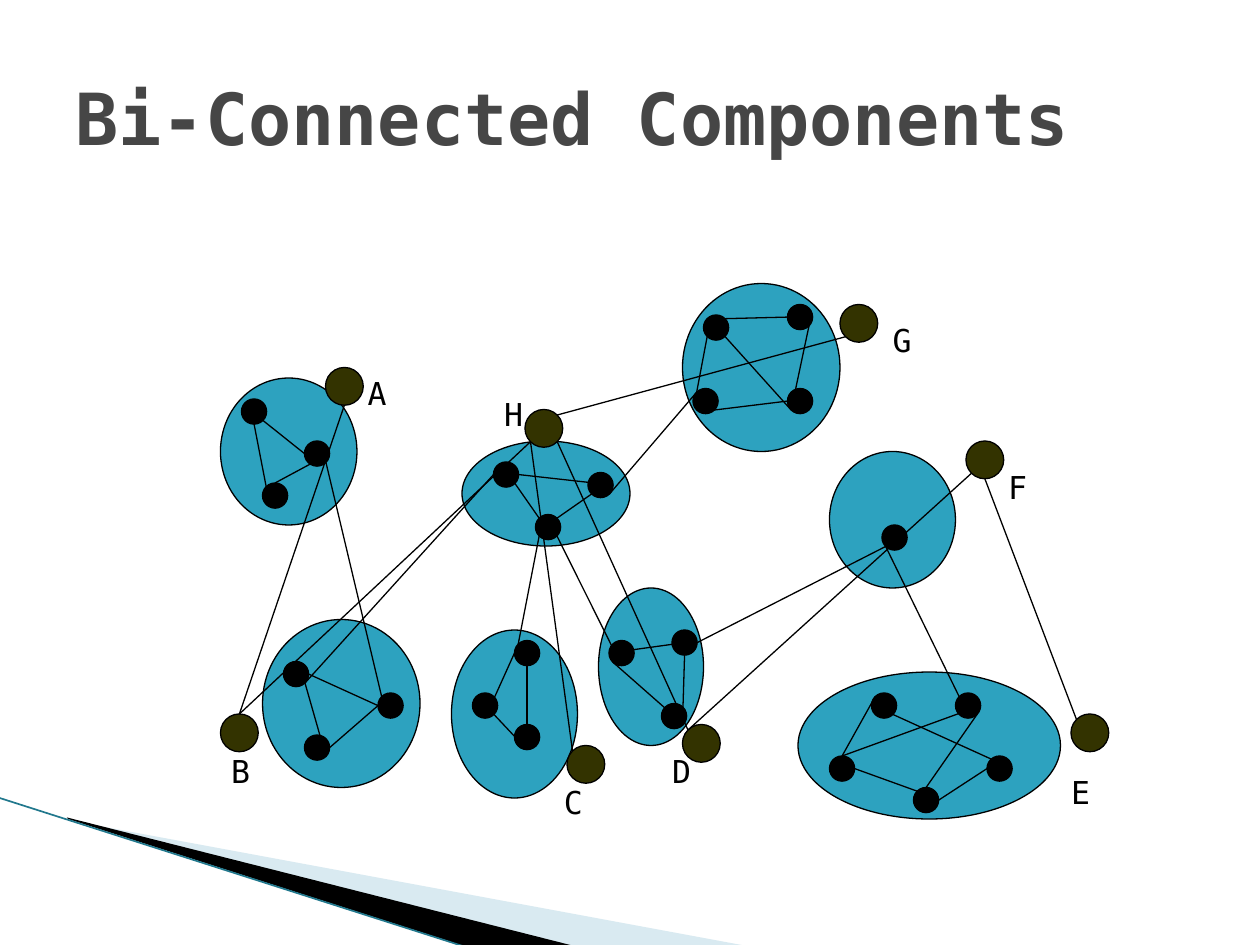
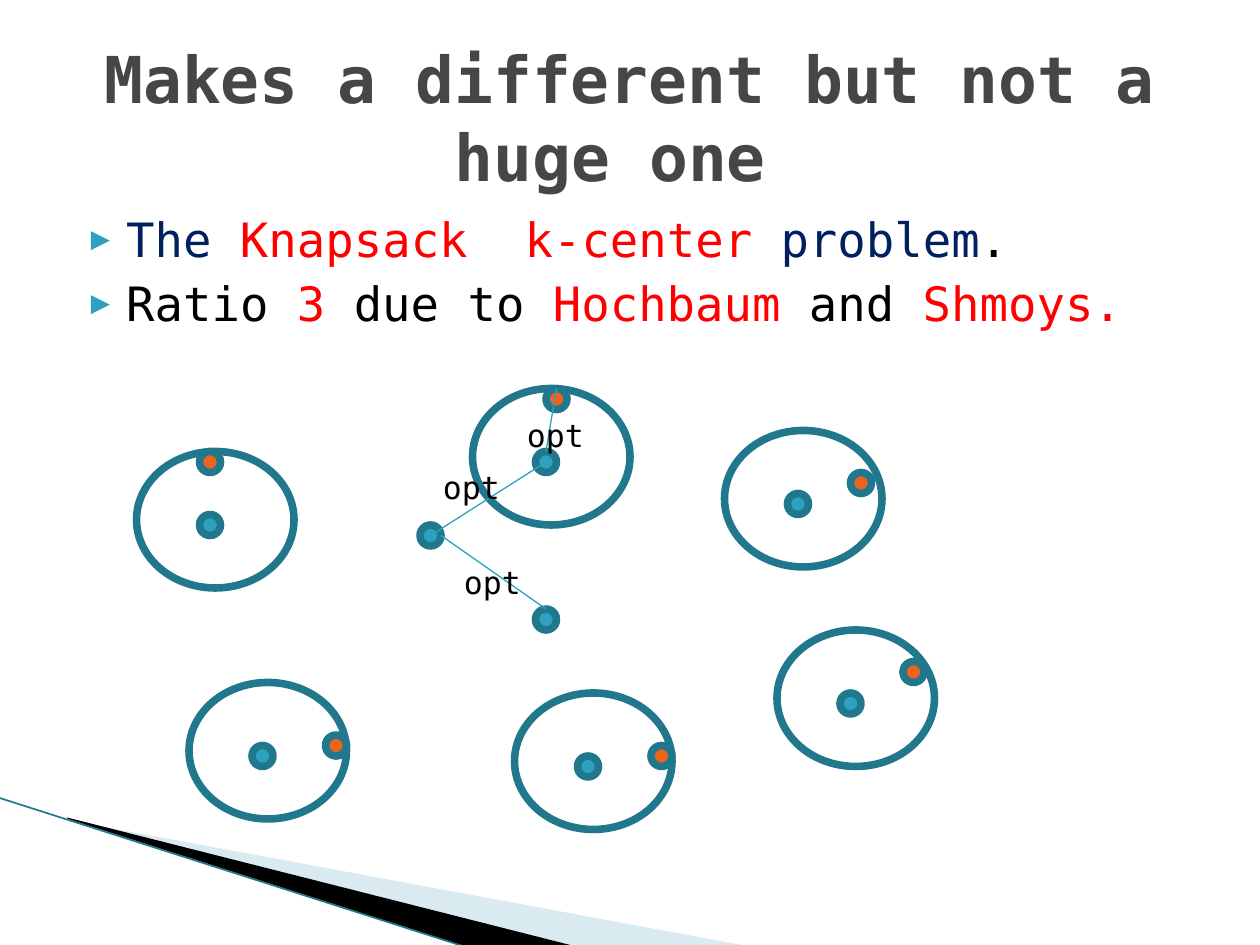
from lxml import etree
from pptx import Presentation
from pptx import util as u
from pptx.dml import color
from pptx.enum import shapes, text
from pptx.oxml import ns

FONT = "DejaVu Sans Mono"
BLACK, WHITE, RED, NAVY = "000000", "FFFFFF", "FF0000", "002060"
GREY, TEAL, DARK_TEAL = "464646", "2DA2BF", "21788D"
PALE_BLUE, ORANGE, OLIVE = "A0CBDC", "EB641B", "333300"

GRID_CM = 2.54 / 12
DOT, HUB, CENTER = 2.4, 3.6, 2
LABEL_HEIGHT = 4.8

DIAGONAL = 0.5 ** 0.5
COMPASS = {
    "c": (0, 0), "n": (0, -1), "s": (0, 1), "w": (-1, 0), "e": (1, 0),
    "nw": (-DIAGONAL, -DIAGONAL), "ne": (DIAGONAL, -DIAGONAL),
    "sw": (-DIAGONAL, DIAGONAL), "se": (DIAGONAL, DIAGONAL),
}

# letter: component box, dots inside it, hub, label offset and width
COMPONENTS = {
    "A": ((1, 9, 13, 14), [(2, 2), (8, 6), (4, 10)], (11, 8), (2, 0, 5)),
    "B": ((5, 32, 15, 16), [(2, 4), (11, 7), (4, 11)], (1, 41), (-1, 3, 5)),
    "C": ((23, 33, 12, 16), [(6, 1), (2, 6), (6, 9)], (34, 44), (-4, 3, 6.7)),
    "D": ((37, 29, 10, 15), [(1, 5), (7, 4), (6, 11)], (45, 42), (-3, 2, 5)),
    "E": ((56, 37, 25, 14), [(7, 2), (15, 2), (3, 8), (18, 8), (11, 11)],
          (82, 41), (-4, 5, 7)),
    "F": ((59, 16, 12, 13), [(5, 7)], (72, 15), (0, 2, 7)),
    "G": ((45, 0, 15, 16), [(2, 3), (10, 2), (1, 10), (10, 10)],
          (60, 2), (2, 1, 6)),
    "H": ((24, 15, 16, 10), [(3, 2), (12, 3), (7, 7)], (30, 12), (-4, -2, 5)),
}
DOT_EDGES = """
A1.s-A3.nw A3.n-A2.e A1.se-A2.w
B1.se-B3.se B1.e-B2.w B3.e-B2.w
C1.s-C3.s C2.s-C1.w C2.se-C3.s
D1.w-D2.c D3.c-D1.sw D2.s-D3.ne
E3.n-E1.nw E1.se-E4.e E3.e-E5.nw E2.e-E3.n E2.se-E5.n E5.e-E4.w
G2.se-G4.sw G3.se-G4.w G4.sw-G1.se G1.ne-G2.w G3.nw-G1.sw
H2.e-H1.e H1.se-H3.nw H3.ne-H2.sw
A2.se-B2.nw B1.se-H1.w H3.se-D1.s H2.se-G3.nw H3.sw-C1.nw
F1.sw-D2.e F1.sw-E2.nw
"""
HUB_EDGES = """
A.s-B.n B.n-H.sw H.sw-C.nw H.ne-G.sw D.nw-F.sw F.s-E.nw H.se-D.nw
"""

CLUSTERS = [((0, 6), (6, 0)), ((32, 0), (7, 0)), ((56, 4), (12, 4)),
            ((5, 28), (13, 5)), ((36, 29), (13, 5)), ((61, 23), (12, 3))]
LOOSE_CENTERS = [(27, 13), (38, 21)]
OPT_LINES = [((39, 21), (29, 14)), ((28, 14), (39, 7)), ((39, 6), (40, 0))]
OPT_LABELS = [(30, 16), (28, 7), (36, 2)]


def rgb(value):
    return color.RGBColor.from_string(value)


def grid(steps):
    return u.Cm(steps * GRID_CM)


def add_xml(parent, tag, **attributes):
    return etree.SubElement(parent, ns.qn(tag), attributes)


def set_font(font, size, value, bold=False):
    font.name, font.size, font.bold = FONT, u.Pt(size), bold
    font.color.rgb = rgb(value)


def add_ellipse(slide, left, top, width, height, fill, line=BLACK, weight=0.75):
    shape = slide.shapes.add_shape(
        shapes.MSO_SHAPE.OVAL, grid(left), grid(top), grid(width), grid(height))
    shape.shadow.inherit = False
    shape.fill.solid()
    shape.fill.fore_color.rgb = rgb(fill)
    shape.line.color.rgb = rgb(line)
    shape.line.width = u.Pt(weight)


def add_line(slide, start, end, value, weight=0.75):
    connector = slide.shapes.add_connector(
        shapes.MSO_CONNECTOR.STRAIGHT, *start, *end)
    connector.line.color.rgb = rgb(value)
    connector.line.width = u.Pt(weight)
    add_xml(connector.element.spPr, "a:effectLst")
    return connector


def add_grid_line(slide, start, end, value):
    add_line(slide, [grid(n) for n in start], [grid(n) for n in end], value)


def add_label(slide, left, top, width, words, alignment):
    box = slide.shapes.add_textbox(
        grid(left), grid(top), grid(width), grid(LABEL_HEIGHT))
    box.text_frame.word_wrap = True
    paragraph = box.text_frame.paragraphs[0]
    paragraph.text = words
    paragraph.alignment = alignment
    set_font(paragraph.font, 18, BLACK)


def add_wedge(slide, points, fill):
    corners = [(u.Cm(x), u.Cm(y)) for x, y in points]
    builder = slide.shapes.build_freeform(*corners[0])
    builder.add_line_segments(corners[1:])
    wedge = builder.convert_to_shape()
    wedge.shadow.inherit = False
    wedge.fill.solid()
    wedge.fill.fore_color.rgb = rgb(fill)
    wedge.line.fill.background()
    return wedge


def decorate_master(presentation, slide):
    pale = add_wedge(slide, [(1.4, 16.54), (15.11, 19.08), (11.58, 19.08),
                             (1.4, 16.51)], PALE_BLUE)
    tint = pale.element.spPr.find(".//" + ns.qn("a:srgbClr"))
    add_xml(tint, "a:alpha", val="40000")
    dark = add_wedge(slide, [(1.35, 16.48), (11.61, 19.08), (9.45, 19.1),
                             (1.37, 16.51)], BLACK)
    edge = add_line(slide, (u.Cm(-0.03), u.Cm(16.08)),
                    (u.Cm(9.42), u.Cm(19.1)), DARK_TEAL, 0.95)
    tree = presentation.slide_master.shapes.element
    for position, part in enumerate((pale, dark, edge), start=2):
        tree.insert(position, part.element)


def place(shape, left, top, width, height):
    shape.left, shape.top = u.Cm(left), u.Cm(top)
    shape.width, shape.height = u.Cm(width), u.Cm(height)
    shape.text_frame.auto_size = text.MSO_AUTO_SIZE.NONE
    shape.text_frame.word_wrap = True


def set_title(slide, words, size, alignment):
    title = slide.shapes.title
    place(title, 1.27, 0.76, 22.86, 3.18)
    title.text_frame.vertical_anchor = text.MSO_ANCHOR.MIDDLE
    paragraph = title.text_frame.paragraphs[0]
    paragraph.text = words
    paragraph.alignment = alignment
    set_font(paragraph.font, size, GREY, bold=True)


def set_bullets(body, items):
    place(body, 1.27, 4.11, 22.86, 12.57)
    frame = body.text_frame
    for index, runs in enumerate(items):
        paragraph = frame.add_paragraph() if index else frame.paragraphs[0]
        properties = paragraph._p.get_or_add_pPr()
        properties.set("marL", str(u.Cm(1.02)))
        properties.set("indent", str(u.Cm(-0.71)))
        add_xml(add_xml(properties, "a:buClr"), "a:srgbClr", val=TEAL)
        add_xml(properties, "a:buSzPct", val="68000")
        add_xml(properties, "a:buFont", typeface=FONT)
        add_xml(properties, "a:buChar", char="▶")
        paragraph.space_before = u.Pt(4 if index else 0)
        set_font(paragraph.font, 27, BLACK)
        for words, value in runs:
            run = paragraph.add_run()
            run.text = words
            run.font.color.rgb = rgb(value)


def draw_edges(slide, edges, nodes):
    def rim(end):
        name, side = end.split(".")
        x, y, size = nodes[name]
        dx, dy = COMPASS[side]
        return x + size / 2 * (1 + dx), y + size / 2 * (1 + dy)

    for edge in edges.split():
        start, end = edge.split("-")
        add_grid_line(slide, rim(start), rim(end), BLACK)


def draw_network(slide, left, top):
    nodes = {}
    for letter, ((x, y, width, height), dots, hub, _) in COMPONENTS.items():
        add_ellipse(slide, left + x, top + y, width, height, TEAL)
        for number, (dx, dy) in enumerate(dots, start=1):
            nodes[f"{letter}{number}"] = (left + x + dx, top + y + dy, DOT)
            add_ellipse(slide, left + x + dx, top + y + dy, DOT, DOT, BLACK)
        nodes[letter] = (left + hub[0], top + hub[1], HUB)
    draw_edges(slide, DOT_EDGES, nodes)
    for letter, (_, _, _, (dx, dy, width)) in COMPONENTS.items():
        x, y, size = nodes[letter]
        add_ellipse(slide, x, y, size, size, OLIVE)
        add_label(slide, x + dx, y + dy, width, letter, text.PP_ALIGN.RIGHT)
    draw_edges(slide, HUB_EDGES, nodes)


def draw_clusters(slide, left, top):
    def ring(x, y, width, height, fill):
        add_ellipse(slide, left + x, top + y, width, height, fill,
                    DARK_TEAL, 4.33)

    for (x, y), (dx, dy) in CLUSTERS:
        ring(x, y, 15, 13, WHITE)
        ring(x + 6, y + 6, CENTER, CENTER, TEAL)
        ring(x + dx, y + dy, CENTER, CENTER, ORANGE)
    for x, y in LOOSE_CENTERS:
        ring(x, y, CENTER, CENTER, TEAL)
    for ends in OPT_LINES:
        start, end = [(left + x, top + y) for x, y in ends]
        add_grid_line(slide, start, end, TEAL)
    for x, y in OPT_LABELS:
        add_label(slide, left + x, top + y, 11, "opt", text.PP_ALIGN.LEFT)


def build_components_slide(slide):
    set_title(slide, "Bi-Connected Components", 41, text.PP_ALIGN.LEFT)
    draw_network(slide, 20, 27)


def build_knapsack_slide(slide):
    set_title(slide, "Makes a different but not a huge one ", 36.9,
              text.PP_ALIGN.CENTER)
    set_bullets(slide.placeholders[1], [
        [("The ", NAVY), ("Knapsack  k-center ", RED), ("problem", NAVY),
         (".", BLACK)],
        [("Ratio ", BLACK), ("3", RED), (" due to ", BLACK),
         ("Hochbaum ", RED), ("and ", BLACK), ("Shmoys.", RED)],
    ])
    draw_clusters(slide, 13, 37)


def main():
    presentation = Presentation()
    presentation.slide_width, presentation.slide_height = u.Cm(25.4), u.Cm(19.05)
    layouts = presentation.slide_layouts
    components = presentation.slides.add_slide(layouts.get_by_name("Title Only"))
    decorate_master(presentation, components)
    build_components_slide(components)
    build_knapsack_slide(
        presentation.slides.add_slide(layouts.get_by_name("Title and Content")))
    presentation.save("out.pptx")


if __name__ == "__main__":
    main()
